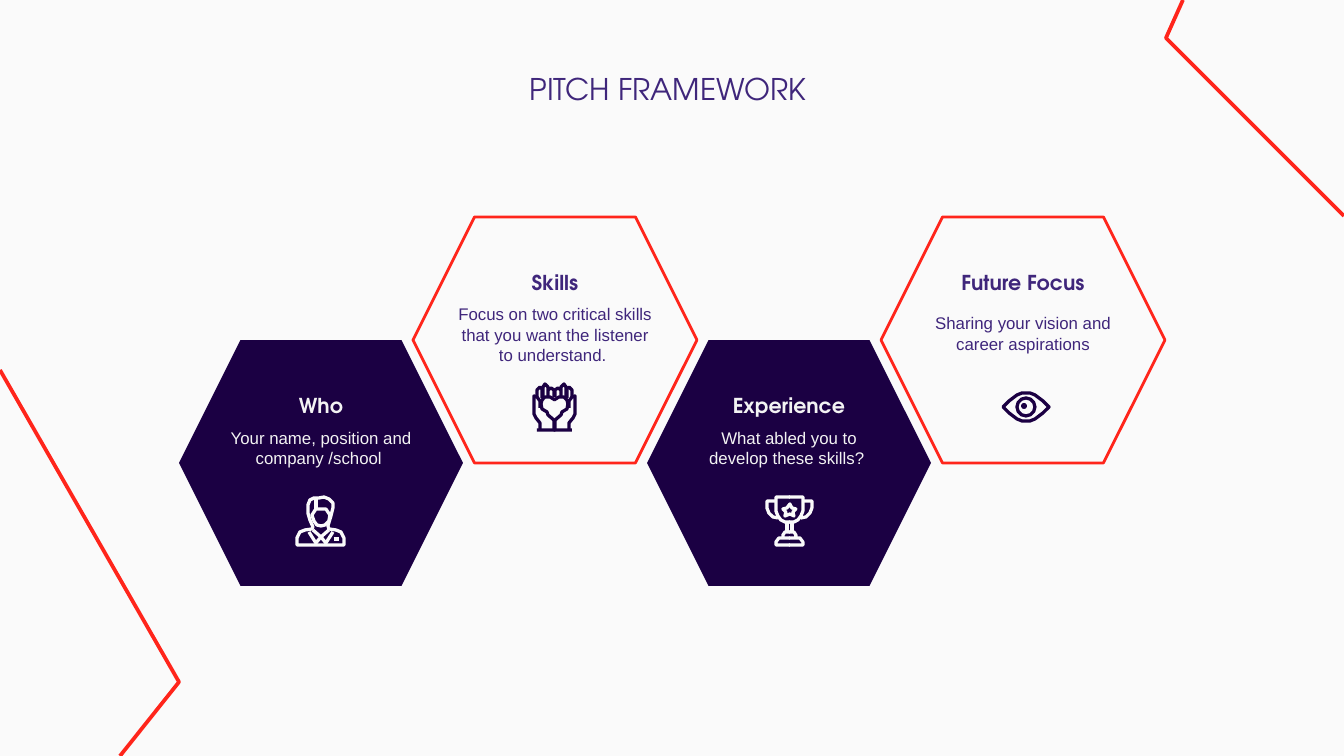
from pptx import Presentation
from pptx.dml.color import RGBColor
from pptx.enum.shapes import MSO_SHAPE
from pptx.enum.text import MSO_ANCHOR, MSO_AUTO_SIZE, PP_ALIGN
from pptx.util import Pt

HEXAGON, OVAL = MSO_SHAPE.HEXAGON, MSO_SHAPE.OVAL
TOP, BOTTOM = MSO_ANCHOR.TOP, MSO_ANCHOR.BOTTOM
CENTER, NO_FIT = PP_ALIGN.CENTER, MSO_AUTO_SIZE.NONE

NAVY = RGBColor(0x1B, 0x00, 0x43)
PURPLE = RGBColor(0x3F, 0x26, 0x7B)
RED = RGBColor(0xFF, 0x25, 0x1B)
PALE = RGBColor(0xF3, 0xF3, 0xF3)
PAPER = RGBColor(0xFA, 0xFA, 0xFA)

SCALE = 914400 / 134.4
W, H = 1344, 756
HEX_W, HEX_H = 284, 246
HEAD_FONT, BODY_FONT = "TeX Gyre Adventor", "Arial"
TITLE = {"name": HEAD_FONT, "size": Pt(16), "bold": False}
HEADING = {"name": HEAD_FONT, "size": Pt(11), "bold": True}
BODY = {"name": BODY_FONT, "size": Pt(9), "bold": False}


def mirrored(strokes, width):
    """Return the strokes together with their left-right mirror images."""
    return strokes + [[(width - x, y) for x, y in s] for s in strokes]


PERSON = [
    [(18, 31), (15, 24), (13, 17), (13, 9), (15, 4), (19, 2), (24, 2), (29, 1),
     (34, 3), (38, 7), (38, 12), (36, 20), (33, 30), (34, 33), (41, 34),
     (46, 36), (49, 42), (49, 49), (2, 49), (2, 42), (5, 36), (10, 34),
     (17, 33), (18, 31)],
    [(17, 19), (19, 25), (22, 29), (26, 30), (30, 29), (34, 25), (35, 19),
     (31, 13), (21, 13), (17, 19)],
    [(21, 13), (21, 3)],
    [(18, 34), (26, 41), (34, 34)],
    [(14, 36), (21, 47), (26, 41), (31, 47), (38, 36)],
    [(39, 43), (44, 43)],
]
HANDS = mirrored([
    [(4, 47), (22, 47), (22, 38), (15, 32), (14, 29), (9, 26), (8, 21),
     (9, 17), (12, 14), (17, 14), (22, 17)],
    [(7, 47), (7, 40), (3, 35), (1, 31), (1, 13), (4, 14), (7, 18), (7, 25)],
    [(4, 14), (4, 7), (7, 4), (9, 6), (9, 15)],
    [(10, 14), (10, 4), (12, 1), (15, 4), (15, 13)],
    [(15, 7), (18, 5), (21, 7), (21, 14)],
], 43)
TROPHY = mirrored([
    [(25, 2), (11, 2), (11, 16), (13, 21), (16, 25), (20, 27), (25, 27)],
    [(11, 6), (2, 6), (2, 13), (4, 18), (8, 22), (13, 23)],
    [(22, 27), (22, 37)],
    [(25, 37), (20, 37), (18, 40), (18, 43)],
    [(25, 43), (14, 43), (11, 47), (11, 50), (25, 50)],
], 49) + [
    [(25, 9), (27, 13), (31, 14), (28, 17), (29, 21), (25, 19), (20, 21),
     (21, 17), (18, 14), (22, 13), (25, 9)],
]
EYE = [
    [(2, 16), (8, 10), (16, 4), (21, 2), (25, 2), (29, 2), (34, 4), (42, 10),
     (48, 16), (42, 22), (34, 28), (29, 30), (25, 30), (21, 30), (16, 28),
     (8, 22), (2, 16)],
]

CARDS = [
    ("Who", "Your name, position and company /school ", PERSON, (116, 156), 75),
    ("Skills", "Focus on two critical skills that you want the listener "
     "to understand. ", HANDS, (120, 166), 74),
    ("Experience", "What abled you to develop these skills? ", TROPHY,
     (118, 155), 75),
    ("Future Focus", "Sharing your vision and career aspirations", EYE,
     (120, 174), 83),
]


def px(n):
    """Convert px to EMU."""
    return round(n * SCALE)


def paint(sp, fill=None, line=None, width=1.5):
    """Set the fill and outline of a shape and drop its shadow."""
    sp.shadow.inherit = False
    for fmt, color in ((sp.fill, fill), (sp.line.fill, line)):
        if color is None:
            fmt.background()
        else:
            fmt.solid()
            fmt.fore_color.rgb = color
    if line is not None:
        sp.line.width = Pt(width)


def add_shape(slide, kind, x, y, w, h, **style):
    """Add a painted preset shape."""
    sp = slide.shapes.add_shape(kind, px(x), px(y), px(w), px(h))
    paint(sp, **style)


def add_strokes(slide, x, y, strokes, color, width):
    """Draw unfilled strokes as one freeform with its origin at x, y."""
    fb = slide.shapes.build_freeform(*strokes[0][0], scale=SCALE)
    fb.add_line_segments(strokes[0][1:], close=False)
    for start, *rest in strokes[1:]:
        fb.move_to(*start)
        fb.add_line_segments(rest, close=False)
    paint(fb.convert_to_shape(px(x), px(y)), line=color, width=width)


def set_text(sp, text, font, color, anchor=TOP):
    """Write one centred paragraph into a shape."""
    tf = sp.text_frame
    margins = {f"margin_{side}": px(13) for side in ("left", "top", "right", "bottom")}
    frame = {"word_wrap": True, "auto_size": NO_FIT, "vertical_anchor": anchor}
    for name, value in {**margins, **frame}.items():
        setattr(tf, name, value)
    p = tf.paragraphs[0]
    p.alignment = CENTER
    r = p.add_run()
    r.text = text
    for name, value in font.items():
        setattr(r.font, name, value)
    r.font.color.rgb = color


def add_text(slide, x, y, w, h, *content):
    """Add a text box."""
    set_text(slide.shapes.add_textbox(px(x), px(y), px(w), px(h)), *content)


def add_title(slide, x, y, w, h, text):
    """Place and fill the title placeholder."""
    sp = slide.shapes.title
    sp.left, sp.top, sp.width, sp.height = map(px, (x, y, w, h))
    set_text(sp, text, TITLE, PURPLE)


def add_card(slide, x, y, card, dark):
    """Build one hexagon card with heading, body and icon."""
    heading, body, icon, (icon_x, icon_y), body_y = card
    style = {"fill": NAVY} if dark else {"line": RED}
    ink, icon_ink = (PALE, PAPER) if dark else (PURPLE, NAVY)
    add_shape(slide, HEXAGON, x, y, HEX_W, HEX_H, **style)
    add_text(slide, x + 48, y + 43, 188, 48, heading, HEADING, ink, BOTTOM)
    add_text(slide, x + 32, y + body_y, 220, 142, body, BODY, ink)
    add_strokes(slide, x + icon_x, y + icon_y, icon, icon_ink, 1.75)
    if icon is EYE:
        left, top = x + icon_x, y + icon_y
        add_shape(slide, OVAL, left + 16, top + 7, 18, 18, line=icon_ink, width=1.75)
        add_shape(slide, OVAL, left + 20, top + 12, 6, 6, fill=icon_ink)


def main():
    """Build the slide and save it."""
    prs = Presentation()
    prs.slide_width, prs.slide_height = px(W), px(H)
    slide = prs.slides.add_slide(prs.slide_layouts[5])
    slide.background.fill.solid()
    slide.background.fill.fore_color.rgb = PAPER
    add_strokes(slide, 0, 370, [[(0, 0), (179, 312), (120, H - 370)]], RED, 2)
    add_strokes(slide, 1166, 0, [[(17, 0), (0, 38), (W - 1166, 216)]], RED, 2)
    add_title(slide, 416, 58, 512, 101, "PITCH FRAMEWORK ")
    for i, card in enumerate(CARDS):
        dark = i % 2 == 0
        add_card(slide, 179 + 234 * i, 340 if dark else 217, card, dark)
    prs.save("out.pptx")


if __name__ == "__main__":
    main()
